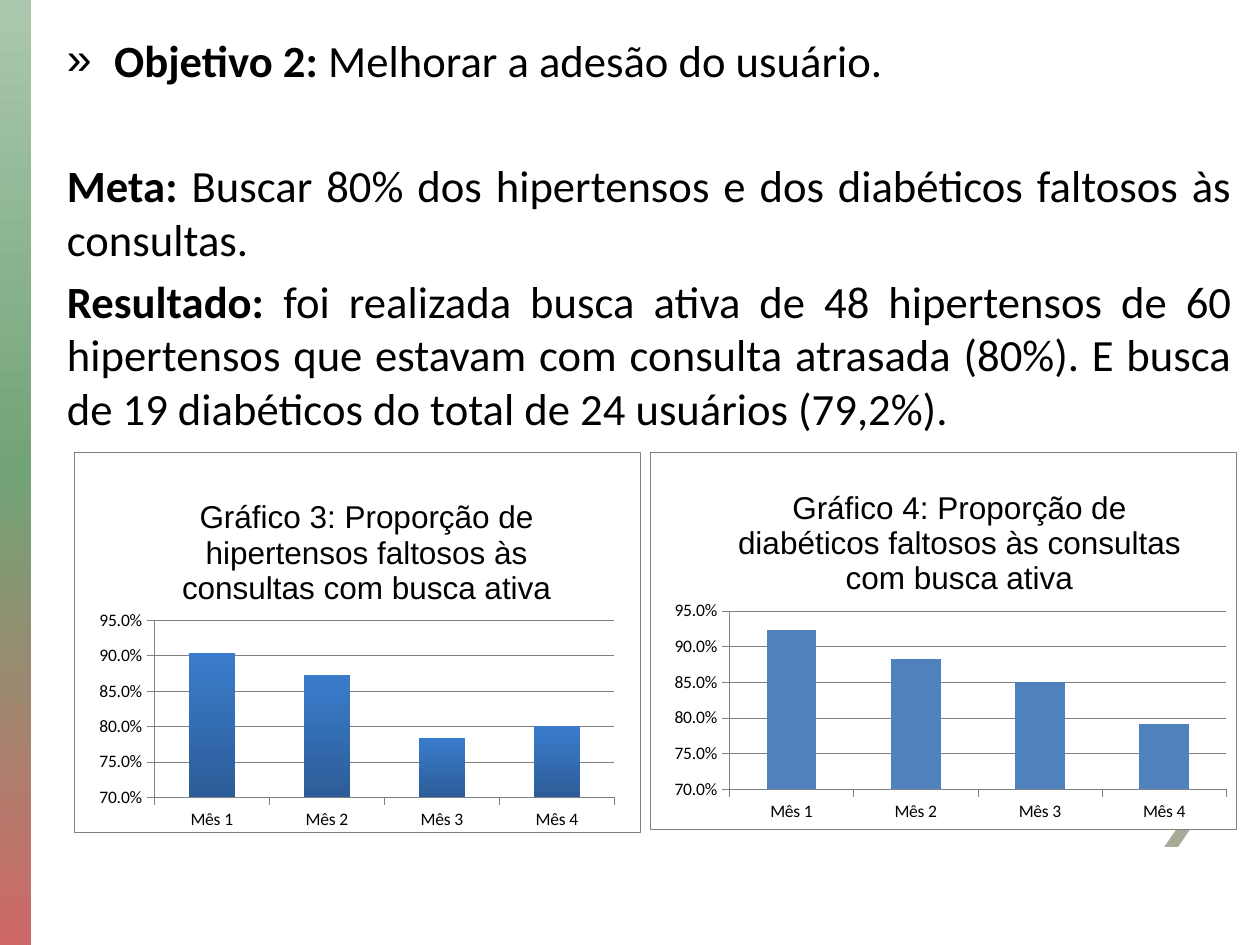
from lxml import etree
from pptx import Presentation
from pptx import util as u
from pptx.chart.data import CategoryChartData
from pptx.dml.color import RGBColor
from pptx.enum import chart as ch, shapes, text
from pptx.oxml import parse_xml
from pptx.oxml.ns import nsdecls, qn

Pt = u.Pt
COLORS = {"black": "000000", "white": "FFFFFF", "gray": "808080", "blue": "4F81BD", "chevron": "A7AA95"}
SIDEBAR = [(0, "AAC8AD"), (50, "72A376"), (100, "CF6868")]
BAR_GRADIENT = [(0, "3A7CCB"), (100, "2C5D98")]

# Paragraphs: bold lead, plain text, space before, bulleted
BODY = [
    ("Objetivo 2: ", "Melhorar a adesão do usuário.", 5, True),
    ("Meta: ", "Buscar 80% dos hipertensos e dos diabéticos faltosos às consultas.", 41, False),
    ("Resultado: ", "foi realizada busca ativa de 48 hipertensos de 60 hipertensos que estavam "
     "com consulta atrasada (80%). E busca de 19 diabéticos do total de 24 usuários (79,2%).", 5, False),
]
MONTHS = ["Mês 1", "Mês 2", "Mês 3", "Mês 4"]
CHARTS = [
    {"title": "Gráfico 3: Proporção de hipertensos faltosos às consultas com busca ativa",
     "values": [0.903, 0.872, 0.784, 0.8], "gradient": BAR_GRADIENT,
     "box": (42.5, 258.5, 323.3, 217.4), "title_at": (0.18, 0.1),
     "plot": (0.141, 0.441, 0.814, 0.467)},
    {"title": "Gráfico 4: Proporção de diabéticos faltosos às consultas com busca ativa",
     "values": [0.923, 0.882, 0.85, 0.792], "gradient": None,
     "box": (371.5, 258.5, 334.8, 215.3), "title_at": (0.14, 0.075),
     "plot": (0.135, 0.421, 0.849, 0.474)},
]


def rgb(name):
    return RGBColor.from_string(COLORS[name])


def style_font(font, name, size, bold=False):
    font.name, font.size, font.bold = name, Pt(size), bold
    font.color.rgb = rgb("black")


def style_line(line):
    line.color.rgb = rgb("gray")
    line.width = Pt(0.25)


def fill_gradient(fill, sp_pr, stops):
    """Vertical gradient with any number of stops."""
    fill.gradient()
    stop_xml = "".join(f'<a:gs pos="{pos * 1000}"><a:srgbClr val="{color}"/></a:gs>' for pos, color in stops)
    new = parse_xml(f'<a:gradFill {nsdecls("a")}><a:gsLst>{stop_xml}</a:gsLst>'
                    '<a:lin ang="5400000" scaled="0"/></a:gradFill>')
    old = sp_pr.find(qn("a:gradFill"))
    sp_pr.replace(old, new)


def manual_layout(position, inner=False):
    tags = [("layoutTarget", "inner")] if inner else []
    tags += [("xMode", "edge"), ("yMode", "edge")] + list(zip("xywh", position))
    items = "".join(f'<c:{tag} val="{val}"/>' for tag, val in tags)
    return parse_xml(f'<c:layout {nsdecls("c")}><c:manualLayout>{items}</c:manualLayout></c:layout>')


def area_format(border):
    line = (f'<a:ln w="3175"><a:solidFill><a:srgbClr val="{COLORS["gray"]}"/></a:solidFill></a:ln>'
            if border else "<a:ln><a:noFill/></a:ln>")
    return parse_xml(f'<c:spPr {nsdecls("c", "a")}><a:solidFill><a:srgbClr val="{COLORS["white"]}"/>'
                     f'</a:solidFill>{line}</c:spPr>')


def add_column_chart(s, item):
    data = CategoryChartData(number_format="0.0%")
    data.categories = MONTHS
    data.add_series("Series 1", item["values"])
    chart = s.shapes.add_chart(ch.XL_CHART_TYPE.COLUMN_CLUSTERED, *map(Pt, item["box"]), data).chart
    chart.has_legend = False
    style_font(chart.font, "Calibri", 11)

    # Title
    title = chart.chart_title
    p = title.text_frame.paragraphs[0]
    r = p.add_run()
    r.text = item["title"]
    style_font(r.font, "Arial", 18)
    title.include_in_layout = False
    title_el = title._element
    for old in title_el.findall(qn("c:layout")):
        title_el.remove(old)
    title_el.find(qn("c:tx")).addnext(manual_layout(item["title_at"]))

    # Axes
    for axis in (chart.category_axis, chart.value_axis):
        axis.major_tick_mark = ch.XL_TICK_MARK.OUTSIDE
        style_font(axis.tick_labels.font, "Calibri", 10)
        style_line(axis.format.line)
    value = chart.value_axis
    value.minimum_scale, value.maximum_scale, value.major_unit = 0.7, 0.95, 0.05
    value.tick_labels.number_format = "0.0%"
    value.tick_labels.number_format_is_linked = False
    value.has_major_gridlines = True
    style_line(value.major_gridlines.format.line)

    # Columns
    plot = chart.plots[0]
    plot.gap_width, plot.vary_by_categories = 150, False
    series = plot.series[0]
    fill = series.format.fill
    if item["gradient"]:
        fill_gradient(fill, series._element.get_or_add_spPr(), item["gradient"])
    else:
        fill.solid()
        fill.fore_color.rgb = rgb("blue")

    # Plot position, backgrounds and border
    chart_el = chart._chartSpace.find(qn("c:chart"))
    area = chart_el.find(qn("c:plotArea"))
    for old in area.findall(qn("c:layout")):
        area.remove(old)
    area.insert(0, manual_layout(item["plot"], inner=True))
    area.append(area_format(border=False))
    chart_el.addnext(area_format(border=True))


def add_body(s):
    body = s.placeholders[1]
    body.left, body.top, body.width, body.height = map(Pt, (31, 15, 680.4, 232.6))
    tf = body.text_frame
    tf.word_wrap, tf.auto_size = True, text.MSO_AUTO_SIZE.NONE
    tf.vertical_anchor = text.MSO_ANCHOR.TOP
    for i, (lead, plain, before, bulleted) in enumerate(BODY):
        p = tf.paragraphs[0] if i == 0 else tf.add_paragraph()
        p.alignment, p.space_before = text.PP_ALIGN.JUSTIFY, Pt(before)
        p_pr = p._p.get_or_add_pPr()
        indent = Pt(27) if bulleted else 0
        p_pr.set("marL", str(indent))
        p_pr.set("indent", str(-indent))
        bullet = etree.SubElement(p_pr, qn("a:buChar" if bulleted else "a:buNone"))
        if bulleted:
            bullet.set("char", "»")
        for content, bold in ((lead, True), (plain, False)):
            r = p.add_run()
            r.text = content
            style_font(r.font, "Calibri", 25.5, bold)


def main():
    prs = Presentation()
    prs.slide_width, prs.slide_height = Pt(720), Pt(540)
    s = prs.slides.add_slide(prs.slide_layouts[1])
    title = s.shapes.title._element
    title.getparent().remove(title)

    # Sidebar
    bar = s.shapes.add_shape(shapes.MSO_SHAPE.RECTANGLE, 0, 0, Pt(18), prs.slide_height)
    bar.shadow.inherit = False
    fill_gradient(bar.fill, bar._element.spPr, SIDEBAR)
    bar.line.fill.background()

    # Chevron behind the charts
    points = [(673.2, 450), (665.3, 450), (676.8, 467.2), (665.3, 484), (673.2, 484), (684.7, 467.2)]
    builder = s.shapes.build_freeform(*map(Pt, points[0]))
    builder.add_line_segments([tuple(map(Pt, point)) for point in points[1:]], close=True)
    chevron = builder.convert_to_shape()
    chevron.shadow.inherit = False
    chevron.fill.solid()
    chevron.fill.fore_color.rgb = rgb("chevron")
    chevron.line.fill.background()

    add_body(s)
    for item in CHARTS:
        add_column_chart(s, item)
    prs.save("out.pptx")


if __name__ == "__main__":
    main()
